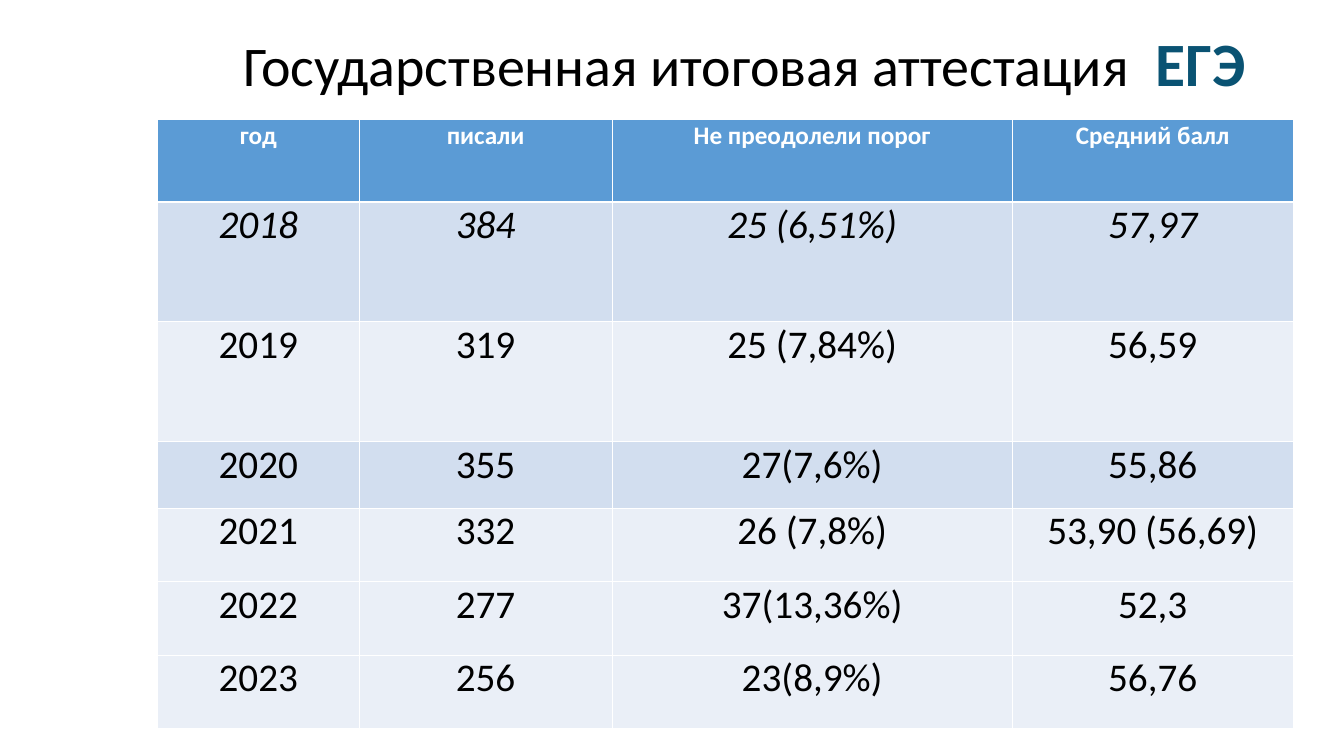
from dataclasses import dataclass

from lxml.etree import SubElement
from pptx import Presentation
from pptx.dml.color import RGBColor
from pptx.enum.text import MSO_ANCHOR as Anchor, PP_ALIGN as Align
from pptx.oxml.ns import qn
from pptx.slide import Slide
from pptx.table import _Cell as Cell
from pptx.text.text import _Paragraph as Paragraph
from pptx.util import Pt

FONT = "Calibri"
BLACK, WHITE, TEAL = "000000", "FFFFFF", "0A5373"
HEADER_BLUE, DARK_BAND, LIGHT_BAND = "5B9BD5", "D2DEEF", "EAEFF7"
THIN, THICK = 0.45, 1.47
COLUMN_WIDTHS = (144, 180.75, 285.75, 200.75)


@dataclass(frozen=True)
class Style:
    size: float
    color: str = BLACK
    bold: bool = False
    italic: bool = False


@dataclass(frozen=True)
class ResultRow:
    texts: tuple[str, str, str, str]
    height: float
    fill: str
    style: Style = Style(28)
    top_line: float = THIN
    bottom_line: float = THIN


EXAM_RESULTS = (
    ResultRow(("год", "писали", "Не преодолели порог", "Средний балл"), 59, HEADER_BLUE,
              Style(18, WHITE, bold=True), bottom_line=THICK),
    ResultRow(("2018", "384", "25 (6,51%)", "57,97"), 85.75, DARK_BAND,
              Style(28, italic=True), top_line=THICK),
    ResultRow(("2019", "319", "25 (7,84%)", "56,59"), 85.75, LIGHT_BAND),
    ResultRow(("2020", "355", "27(7,6%)", "55,86"), 47.5, DARK_BAND),
    ResultRow(("2021", "332", "26 (7,8%)", "53,90 (56,69)"), 52.5, LIGHT_BAND),
    ResultRow(("2022", "277", "37(13,36%)", "52,3"), 52.5, LIGHT_BAND),
    ResultRow(("2023", "256", "23(8,9%)", "56,76"), 52.5, LIGHT_BAND),
)


def rgb(color: str) -> RGBColor:
    return RGBColor.from_string(color)


def add_run(paragraph: Paragraph, text: str, style: Style) -> None:
    run = paragraph.add_run()
    run.text = text
    run.font.name = FONT
    run.font.size = Pt(style.size)
    run.font.bold = style.bold
    run.font.italic = style.italic
    run.font.color.rgb = rgb(style.color)


def add_border(cell: Cell, side: str, width: float) -> None:
    properties = cell._tc.get_or_add_tcPr()
    border = SubElement(properties, qn(f"a:ln{side}"), w=str(Pt(width)))
    line_fill = SubElement(border, qn("a:solidFill"))
    SubElement(line_fill, qn("a:srgbClr"), val=WHITE)


def fill_cell(cell: Cell, text: str, row: ResultRow) -> None:
    borders = {"L": THIN, "R": THIN, "T": row.top_line, "B": row.bottom_line}
    for side, width in borders.items():
        add_border(cell, side, width)
    cell.fill.solid()
    cell.fill.fore_color.rgb = rgb(row.fill)
    paragraph = cell.text_frame.paragraphs[0]
    paragraph.alignment = Align.CENTER
    paragraph.line_spacing = 0.83
    add_run(paragraph, text, row.style)


def add_title(slide: Slide) -> None:
    title = slide.shapes.add_textbox(Pt(131.75), Pt(10.75), Pt(800), Pt(74.25)).text_frame
    title.word_wrap = True
    title.vertical_anchor = Anchor.MIDDLE
    heading = title.paragraphs[0]
    heading.alignment = Align.CENTER
    heading.line_spacing = 0.9
    add_run(heading, "Государственная итоговая аттестация ", Style(40))
    add_run(heading, " ЕГЭ", Style(44, TEAL, bold=True))


def add_results(slide: Slide) -> None:
    results = slide.shapes.add_table(
        len(EXAM_RESULTS), len(COLUMN_WIDTHS), Pt(112.5), Pt(85),
        Pt(sum(COLUMN_WIDTHS)), Pt(sum(row.height for row in EXAM_RESULTS)),
    ).table
    for column, width in zip(results.columns, COLUMN_WIDTHS):
        column.width = Pt(width)
    for year_row, row in zip(results.rows, EXAM_RESULTS):
        year_row.height = Pt(row.height)
        for cell, text in zip(year_row.cells, row.texts):
            fill_cell(cell, text, row)


def main() -> None:
    deck = Presentation()
    deck.slide_width, deck.slide_height = Pt(960), Pt(540)
    slide = deck.slides.add_slide(deck.slide_layouts[6])
    add_title(slide)
    add_results(slide)
    deck.save("out.pptx")


if __name__ == "__main__":
    main()
